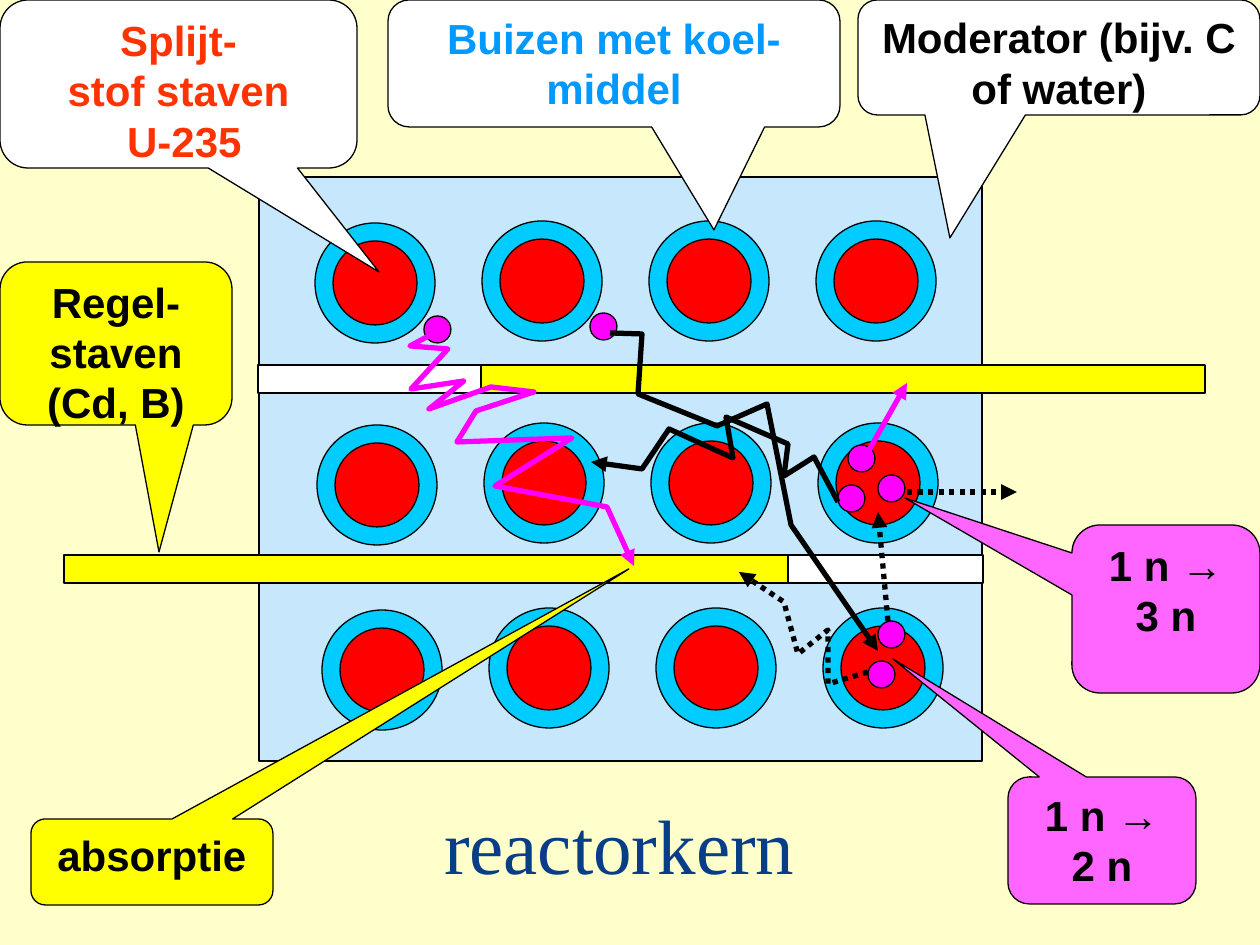
from pptx import Presentation
from pptx.dml.color import RGBColor
from pptx.enum.dml import MSO_LINE
from pptx.enum.shapes import MSO_CONNECTOR, MSO_SHAPE
from pptx.enum.text import MSO_ANCHOR, PP_ALIGN
from pptx.oxml.ns import qn
from pptx.util import Pt
from lxml.etree import SubElement

PX = 914400 / 126

BLACK = RGBColor(0x00, 0x00, 0x00)
WHITE = RGBColor(0xFF, 0xFF, 0xFF)
CREAM = RGBColor(0xFF, 0xFF, 0xCC)
NAVY = RGBColor(0x07, 0x3E, 0x87)
MODERATOR_BLUE = RGBColor(0xC6, 0xE7, 0xFC)
COOLANT_BLUE = RGBColor(0x00, 0xCC, 0xFF)
LABEL_BLUE = RGBColor(0x00, 0x99, 0xFF)
FUEL_RED = RGBColor(0xFF, 0x00, 0x00)
LABEL_RED = RGBColor(0xFF, 0x33, 0x00)
YELLOW = RGBColor(0xFF, 0xFF, 0x00)
MAGENTA = RGBColor(0xFF, 0x00, 0xFF)
PINK = RGBColor(0xFF, 0x66, 0xFF)

TUBE, ROD, NEUTRON = 120, 84, 27
COLUMN_PITCH = 167
TUBE_ROWS = [(315, 221), (317, 423), (322, 608)]


def emu(*lengths):
    return [round(length * PX) for length in lengths]


class Drawing:
    """Holds the slide and its common style."""

    def __init__(self, slide):
        self.slide = slide
        self.shapes = slide.shapes
        self.font = "Arial"
        self.size = 24
        self.outline = 0.75
        self.track = 3

    def background(self, color):
        fill = self.slide.background.fill
        fill.solid()
        fill.fore_color.rgb = color

    def shape(self, kind, left, top, width, height, color):
        shape = self.shapes.add_shape(kind, *emu(left, top, width, height))
        shape.shadow.inherit = False
        shape.fill.solid()
        shape.fill.fore_color.rgb = color
        shape.line.color.rgb = BLACK
        shape.line.width = Pt(self.outline)
        return shape

    def bar(self, left, top, width, height, color):
        self.shape(MSO_SHAPE.RECTANGLE, left, top, width, height, color)

    def disc(self, left, top, size, color):
        self.shape(MSO_SHAPE.OVAL, left, top, size, size, color)

    def add_text(self, frame, lines, color, font, size, bold):
        frame.word_wrap = True
        for index, text in enumerate(lines):
            para = frame.paragraphs[0] if index == 0 else frame.add_paragraph()
            para.alignment = PP_ALIGN.CENTER
            span = para.add_run()
            span.text = text
            span.font.name = font
            span.font.size = Pt(size)
            span.font.bold = bold
            span.font.color.rgb = color

    def title(self, left, top, width, height, text):
        box = self.shapes.add_textbox(*emu(left, top, width, height))
        box.text_frame.vertical_anchor = MSO_ANCHOR.MIDDLE
        self.add_text(box.text_frame, [text], NAVY, "Times New Roman", 44, False)

    def callout(self, left, top, width, height, tip, fill, lines, color=BLACK):
        """Draw a rounded callout whose pointer ends at tip."""
        box = self.shape(MSO_SHAPE.ROUNDED_RECTANGULAR_CALLOUT,
                         left, top, width, height, fill)
        box.adjustments[0] = (tip[0] - left) / width - 0.5
        box.adjustments[1] = (tip[1] - top) / height - 0.5
        box.adjustments[2] = 0.167
        box.text_frame.vertical_anchor = MSO_ANCHOR.TOP
        self.add_text(box.text_frame, lines, color, self.font, self.size, True)

    def arrow_style(self, item, color, dotted):
        item.line.color.rgb = color
        item.line.width = Pt(self.track)
        if dotted:
            item.line.dash_style = MSO_LINE.ROUND_DOT
        line = item.element.spPr.get_or_add_ln()
        SubElement(line, qn("a:tailEnd"), type="triangle")

    def arrow(self, start, end, color=BLACK, dotted=False):
        arrow = self.shapes.add_connector(
            MSO_CONNECTOR.STRAIGHT, *emu(*start, *end))
        self.arrow_style(arrow, color, dotted)
        SubElement(arrow.element.spPr, qn("a:effectLst"))

    def zigzag(self, points, color=BLACK, dotted=False):
        """Draw an open line of straight pieces ending in an arrowhead."""
        builder = self.shapes.build_freeform(*points[0], scale=PX)
        builder.add_line_segments(points[1:], close=False)
        track = builder.convert_to_shape()
        track.shadow.inherit = False
        track.fill.background()
        self.arrow_style(track, color, dotted)


def draw_core(drawing):
    drawing.bar(259, 177, 723, 584, MODERATOR_BLUE)
    inset = (TUBE - ROD) // 2
    for left, top in TUBE_ROWS:
        for column in range(4):
            x = left + column * COLUMN_PITCH
            y = top + (2 if column == 0 else 0)
            drawing.disc(x, y, TUBE, COOLANT_BLUE)
            drawing.disc(x + inset, y + inset, ROD, FUEL_RED)
    drawing.bar(259, 555, 724, 28, WHITE)
    drawing.bar(258, 365, 724, 28, WHITE)
    drawing.bar(481, 365, 724, 28, YELLOW)


def draw_reactions(drawing):
    for left, top in [(424, 316), (590, 313), (878, 621), (868, 661),
                      (848, 445), (878, 475), (838, 485)]:
        drawing.disc(left, top, NEUTRON, MAGENTA)
    drawing.zigzag([(610, 333), (642, 334), (638, 394), (717, 426),
                    (767, 404), (791, 525), (878, 651)])
    drawing.arrow((888, 621), (878, 512), dotted=True)
    drawing.arrow((907, 492), (1017, 492), dotted=True)
    drawing.arrow((868, 452), (907, 383), MAGENTA)
    drawing.zigzag([(838, 502), (814, 457), (784, 476), (788, 444), (726, 417),
                    (733, 458), (669, 429), (642, 469), (591, 462)])


def draw_labels(drawing):
    drawing.callout(858, 0, 402, 115, (950, 238), WHITE,
                    ["Moderator (bijv. C of water)"])
    drawing.callout(388, 0, 452, 127, (714, 230), WHITE,
                    ["Buizen met koel-middel"], LABEL_BLUE)
    drawing.callout(0, 0, 357, 168, (379, 272), WHITE,
                    ["Splijt-", "stof staven", " U-235"], LABEL_RED)
    drawing.callout(0, 262, 232, 163, (159, 552), YELLOW,
                    ["Regel-", "staven (Cd, B)"])
    drawing.callout(1072, 525, 188, 168, (905, 498), PINK, ["1 n →", "3 n"])
    drawing.callout(1008, 777, 188, 127, (893, 659), PINK, ["1 n →", "2 n"])


def draw_absorption(drawing):
    drawing.bar(64, 555, 724, 28, YELLOW)
    drawing.zigzag([(449, 325), (410, 346), (448, 349), (411, 389), (464, 381),
                    (429, 409), (491, 387), (534, 392), (476, 411), (457, 442),
                    (572, 438), (495, 486), (607, 507), (634, 566)], MAGENTA)
    drawing.zigzag([(868, 672), (828, 684), (828, 630), (798, 654),
                    (784, 602), (739, 572)], dotted=True)
    drawing.callout(31, 819, 242, 86, (629, 569), YELLOW, ["absorptie"])


def main():
    deck = Presentation()
    deck.slide_width, deck.slide_height = emu(1260, 945)
    drawing = Drawing(deck.slides.add_slide(deck.slide_layouts[6]))
    drawing.background(CREAM)
    drawing.title(84, 742, 1071, 203, "reactorkern")
    draw_core(drawing)
    draw_reactions(drawing)
    draw_labels(drawing)
    draw_absorption(drawing)
    deck.save("out.pptx")


if __name__ == "__main__":
    main()
